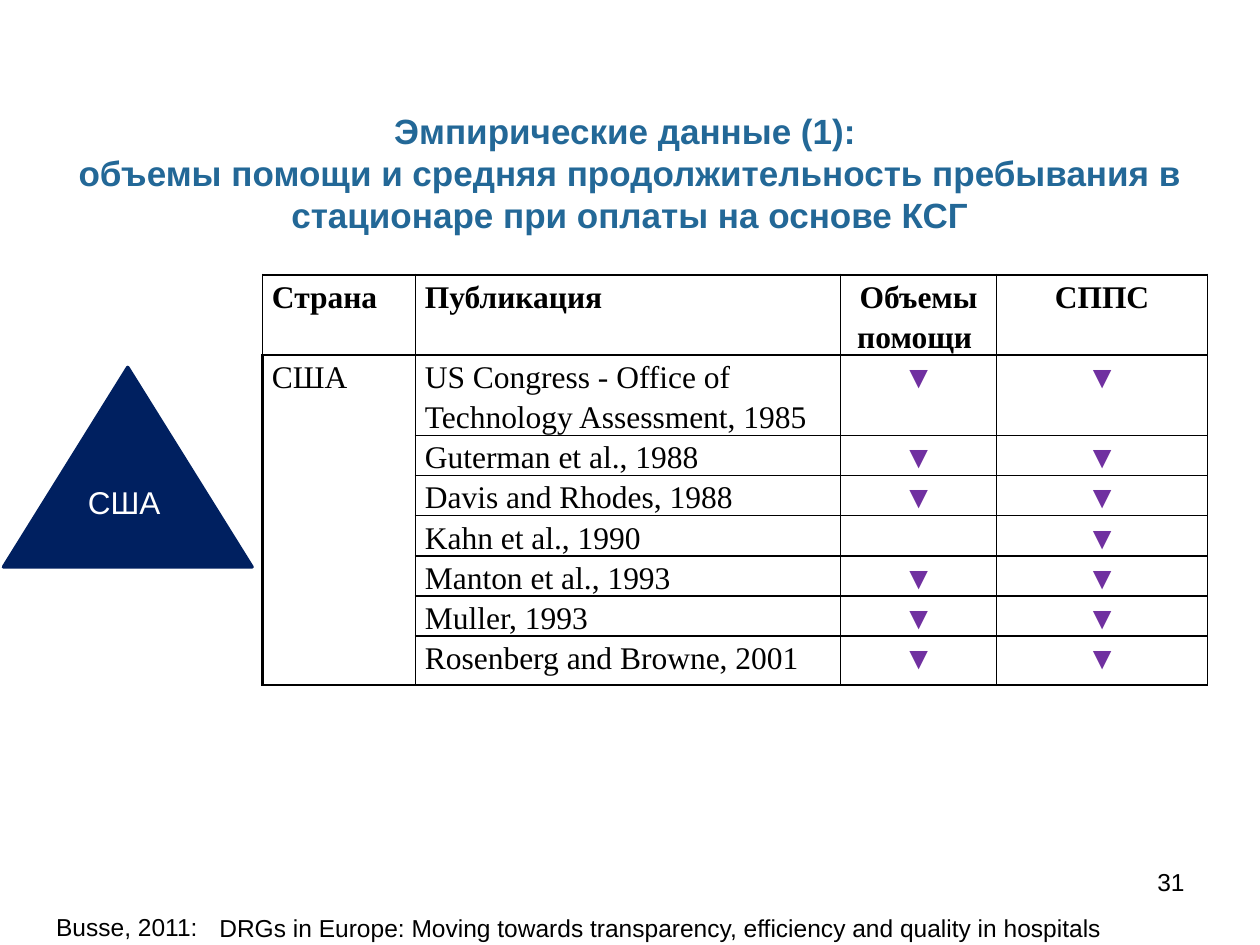
from lxml import etree
from pptx import Presentation
from pptx.dml.color import RGBColor
from pptx.enum.shapes import MSO_SHAPE
from pptx.enum.text import MSO_ANCHOR, PP_ALIGN
from pptx.oxml.ns import qn
from pptx.util import Pt

LEFT, CENTER, RIGHT = PP_ALIGN.LEFT, PP_ALIGN.CENTER, PP_ALIGN.RIGHT
TOP, MIDDLE = MSO_ANCHOR.TOP, MSO_ANCHOR.MIDDLE
TRIANGLE = MSO_SHAPE.ISOSCELES_TRIANGLE

BLACK = RGBColor(0x00, 0x00, 0x00)
WHITE = RGBColor(0xFF, 0xFF, 0xFF)
BLUE = RGBColor(0x23, 0x68, 0x97)
NAVY = RGBColor(0x00, 0x20, 0x60)
PURPLE = RGBColor(0x70, 0x30, 0xA0)

SANS, SERIF = "Arial", "Times New Roman"
THIN, THICK = 1, 1.5

DOWN = "▼"
HEADER = ("Страна", "Публикация", "Объемы помощи ", "СППС")
STUDIES = (
    ("США", "US Congress - Office of Technology Assessment, 1985", DOWN, DOWN),
    ("", "Guterman et al., 1988", DOWN, DOWN),
    ("", "Davis and Rhodes, 1988", DOWN, DOWN),
    ("", "Kahn et al., 1990", "", DOWN),
    ("", "Manton et al., 1993", DOWN, DOWN),
    ("", "Muller, 1993", DOWN, DOWN),
    ("", "Rosenberg and Browne, 2001", DOWN, DOWN),
)
COL_WIDTHS = (87.4, 242.9, 89.3, 120.4)
ROW_HEIGHTS = (46, 45.5) + (22.8,) * 5 + (28,)


def write(tf, text, size=14, font=SANS, color=BLACK, bold=False, align=LEFT, spacing=None):
    p = tf.paragraphs[0]
    p.text = text
    p.alignment = align
    if spacing is not None:
        p.line_spacing = spacing
    for r in p.runs:
        r.font.size = Pt(size)
        r.font.name = font
        r.font.bold = bold
        r.font.color.rgb = color


def set_borders(cell, left, right, top, bottom):
    """Give each side its width in points; 0 hides the side."""
    tc_pr = cell._tc.get_or_add_tcPr()
    for side, width in zip("LRTB", (left, right, top, bottom)):
        ln = etree.SubElement(tc_pr, qn(f"a:ln{side}"), w=str(Pt(width)))
        if width:
            fill = etree.SubElement(ln, qn("a:solidFill"))
            etree.SubElement(fill, qn("a:srgbClr"), val=str(BLACK))
        else:
            etree.SubElement(ln, qn("a:noFill"))


class SlideBuilder:
    def __init__(self, prs):
        self.slide = prs.slides.add_slide(prs.slide_layouts[6])

    def text(self, x, y, w, h, text, anchor=TOP, **style):
        tf = self.slide.shapes.add_textbox(Pt(x), Pt(y), Pt(w), Pt(h)).text_frame
        tf.word_wrap = True
        tf.vertical_anchor = anchor
        write(tf, text, **style)

    def shape(self, kind, x, y, w, h, color, line_width):
        sp = self.slide.shapes.add_shape(kind, Pt(x), Pt(y), Pt(w), Pt(h))
        sp.shadow.inherit = False
        sp.fill.solid()
        sp.fill.fore_color.rgb = color
        sp.line.color.rgb = color
        sp.line.width = Pt(line_width)

    def table(self, x, y, rows, col_widths, row_heights):
        """Draw a table whose first column is one open block below the header."""
        frame = self.slide.shapes.add_table(
            len(rows), len(col_widths), Pt(x), Pt(y),
            Pt(sum(col_widths)), Pt(sum(row_heights)))
        table = frame.table
        table.first_row = table.horz_banding = False
        for col, width in zip(table.columns, col_widths):
            col.width = Pt(width)
        for row, height in zip(table.rows, row_heights):
            row.height = Pt(height)
        last = len(rows) - 1
        for i, row in enumerate(rows):
            for j, text in enumerate(row):
                cell = table.cell(i, j)
                cell.margin_left = cell.margin_right = Pt(5.4)
                cell.margin_top = cell.margin_bottom = 0
                block = j == 0 and i > 0
                inner = 0 if block else THIN
                set_borders(
                    cell,
                    left=THICK if block else THIN,
                    right=THIN,
                    top=THICK if i < 2 else inner,
                    bottom=THICK if i in (0, last) else inner)
                cell.fill.background()
                write(cell.text_frame, text, size=18, font=SERIF, bold=i < 2 and (i == 0 or j > 0 and False) or (i > 0 and j > 0 and False),
                      color=PURPLE if text == DOWN else BLACK,
                      align=CENTER if j > 1 else LEFT, spacing=1.15)


def main():
    prs = Presentation()
    prs.slide_width, prs.slide_height = Pt(720), Pt(540)
    s = SlideBuilder(prs)
    s.table(150, 157, (HEADER,) + STUDIES, COL_WIDTHS, ROW_HEIGHTS)
    s.text(0, 59, 720, 79,
           "Эмпирические данные (1): \nобъемы помощи и средняя продолжительность "
           "пребывания в стационаре при оплаты на основе КСГ",
           anchor=MIDDLE, size=20, color=BLUE, bold=True, align=CENTER)
    s.shape(TRIANGLE, 2, 210, 142, 114, NAVY, line_width=2)
    s.text(26, 270, 95, 31, "США ", size=18, color=WHITE, align=CENTER, spacing=Pt(24))
    s.text(516, 492, 168, 37, "31", align=RIGHT)
    s.text(96, 518, 563, 22,
           "DRGs in Europe: Moving towards transparency, efficiency and quality in hospitals",
           align=CENTER)
    s.text(25, 517.5, 132, 19, "Busse, 2011:")
    prs.save("out.pptx")


if __name__ == "__main__":
    main()
